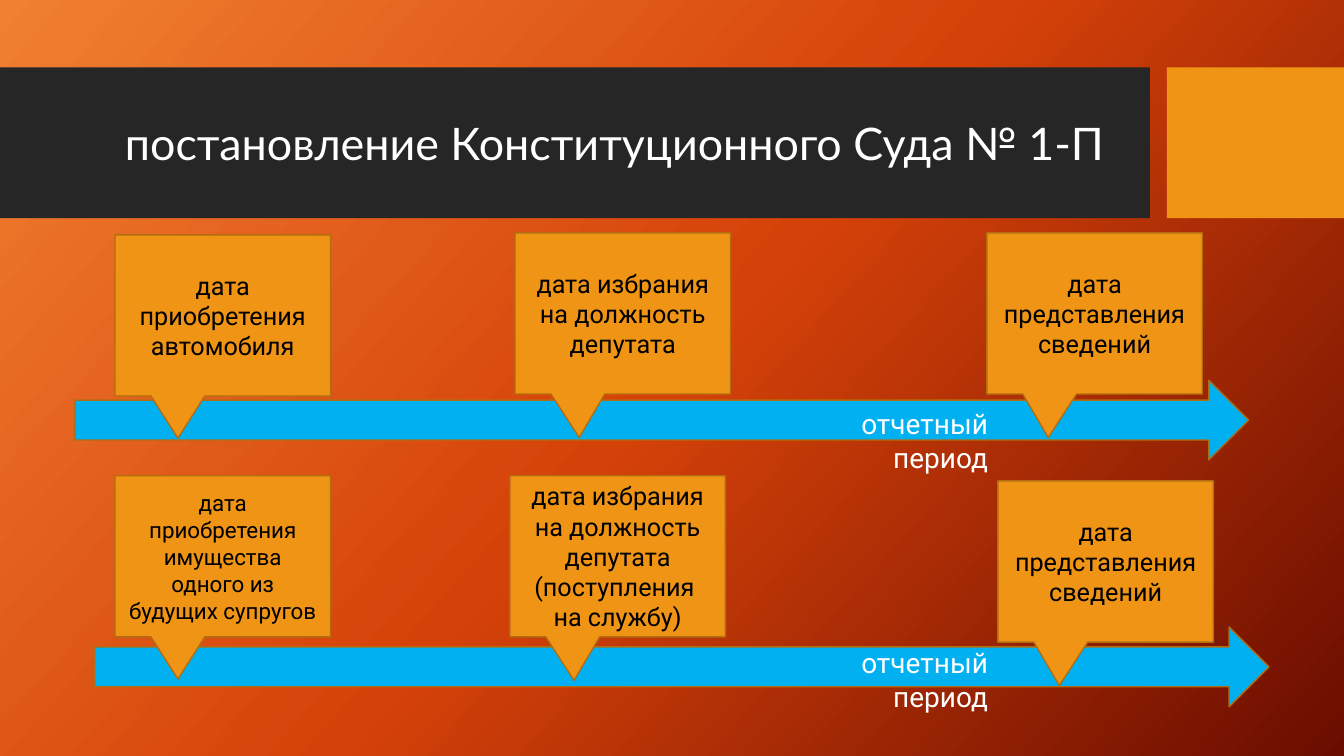
from lxml import etree
from pptx import Presentation
from pptx.dml.color import RGBColor
from pptx.enum.shapes import MSO_SHAPE
from pptx.enum.text import MSO_ANCHOR, PP_ALIGN
from pptx.oxml.ns import qn
from pptx.util import Cm, Pt

RECTANGLE = MSO_SHAPE.RECTANGLE
ARROW = MSO_SHAPE.RIGHT_ARROW
CALLOUT = MSO_SHAPE.RECTANGULAR_CALLOUT
LEFT, CENTER, RIGHT = PP_ALIGN.LEFT, PP_ALIGN.CENTER, PP_ALIGN.RIGHT
TOP, MIDDLE = MSO_ANCHOR.TOP, MSO_ANCHOR.MIDDLE

COLORS = {
    "band": "262626", "accent": "F09415", "outline": "B26D10",
    "arrow": "00B0F0", "light": "FFFFFF", "dark": "000000",
}
BACKGROUND_STOPS = [(0, "F18031"), (50, "D54209"), (100, "6A0D00")]
CALLOUT_SIZE = (5.43, 4.06)
CALLOUT_TIPS = [(-0.208, 0.762), (-0.202, 0.77), (-0.215, 0.77)]

# Each callout: offset from the arrow's corner, font size, text
TIMELINES = [
    {"box": (1.88, 9.58, 29.59, 2.01), "label": (17.17, 0.55), "callouts": [
        (1.02, -3.66, 18, "дата приобретения автомобиля"),
        (11.1, -3.71, 18, "дата избрания на должность депутата"),
        (22.99, -3.71, 18, "дата представления сведений")]},
    {"box": (2.39, 15.8, 29.59, 2.01), "label": (16.66, 0.35), "callouts": [
        (0.51, -3.81, 16,
         "дата приобретения имущества одного из будущих супругов"),
        (10.46, -3.81, 18,
         "дата избрания на должность депутата (поступления \nна службу)"),
        (22.76, -3.68, 18, "дата представления сведений")]},
]


def color(name):
    return RGBColor.from_string(COLORS[name])


def paint_background(page):
    fill = page.background.fill
    fill.gradient()
    fill.gradient_angle = 318
    stops = page.element.find(".//" + qn("a:gsLst"))
    for stop in list(stops):
        stops.remove(stop)
    for percent, value in BACKGROUND_STOPS:
        stop = etree.SubElement(stops, qn("a:gs"), pos=str(percent * 1000))
        etree.SubElement(stop, qn("a:srgbClr"), val=value)


def add_block(page, kind, box, fill, outline=None):
    shape = page.shapes.add_shape(kind, *map(Cm, box))
    shape.shadow.inherit = False
    shape.fill.solid()
    shape.fill.fore_color.rgb = color(fill)
    if outline:
        shape.line.color.rgb = color(outline)
        shape.line.width = Pt(1)
    else:
        shape.line.fill.background()
    return shape


def write(shape, text, size, font, tint, align, anchor):
    frame = shape.text_frame
    frame.word_wrap = True
    frame.vertical_anchor = anchor
    para = frame.paragraphs[0]
    para.alignment = align
    for number, line in enumerate(text.split("\n")):
        if number:
            para.add_line_break()
        para.add_run().text = line
    para.font.size = Pt(size)
    para.font.name = font
    para.font.color.rgb = color(tint)
    return para


def add_header(page, box):
    left, top, width, height = box
    add_block(page, RECTANGLE, (left, top, 28.98, height), "band")
    add_block(page, RECTANGLE, (left + 29.41, top, width - 29.41, height),
              "accent")
    title = page.shapes.add_textbox(Cm(left + 2.9), Cm(top + 0.38),
                                    Cm(25.7), Cm(3.2))
    para = write(title, "постановление Конституционного Суда № 1-П",
                 32, "Lato", "light", LEFT, MIDDLE)
    para.line_spacing = 0.9


def add_timeline(page, box, label, callouts):
    left, top = box[:2]
    # Time arrow
    add_block(page, ARROW, box, "arrow", "outline")
    # Reporting period
    period = page.shapes.add_textbox(Cm(left + label[0]), Cm(top + label[1]),
                                     Cm(6.1), Cm(1.11))
    write(period, "отчетный период", 20, "Roboto", "light", RIGHT, TOP)
    # Dates
    for (across, down, size, text), tip in zip(callouts, CALLOUT_TIPS):
        place = (left + across, top + down, *CALLOUT_SIZE)
        date = add_block(page, CALLOUT, place, "accent", "outline")
        date.adjustments[0], date.adjustments[1] = tip
        write(date, text, size, "Roboto", "dark", CENTER, MIDDLE)


def main():
    deck = Presentation()
    deck.slide_width, deck.slide_height = Cm(33.87), Cm(19.05)
    page = deck.slides.add_slide(deck.slide_layouts[6])
    paint_background(page)
    add_header(page, (0, 1.7, 33.87, 3.8))
    for timeline in TIMELINES:
        add_timeline(page, **timeline)
    deck.save("out.pptx")


if __name__ == "__main__":
    main()
